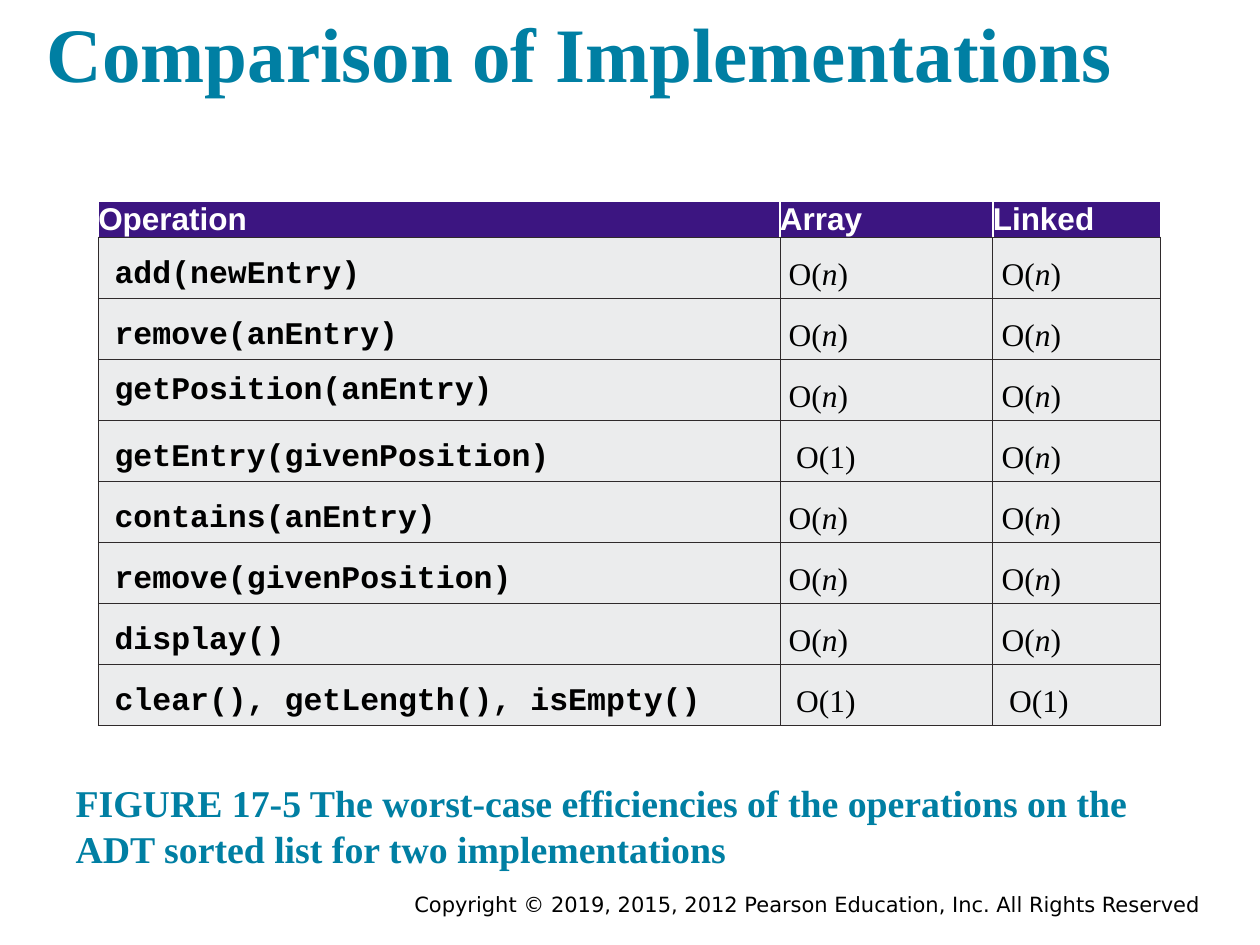
from dataclasses import dataclass

from lxml import etree
from pptx import Presentation
from pptx import util as u
from pptx.dml.color import RGBColor
from pptx.enum import text
from pptx.oxml import ns

TEAL = RGBColor(0x00, 0x7F, 0xA3)
PURPLE = RGBColor(0x3C, 0x15, 0x81)
PALE_GRAY = RGBColor(0xEB, 0xEC, 0xED)
DARK = RGBColor(0x2F, 0x2A, 0x2B)
WHITE = RGBColor(0xFF, 0xFF, 0xFF)
BLACK = RGBColor(0x00, 0x00, 0x00)

SERIF = "Times New Roman"
CODE = "Courier New"
LINEAR = "O(n)"
CONSTANT = "O(1)"

COLUMN_WIDTHS = (5.41, 1.69, 1.33)
HEADER_HEIGHT = 0.28
ROW_HEIGHT = 0.485
CELL_INDENT = 0.06


@dataclass(frozen=True)
class Operation:
    name: str
    array: str = LINEAR
    linked: str = LINEAR
    spacing: float = 1.3


HEADINGS = ("Operation", "Array", "Linked")
OPERATIONS = (
    Operation("add(newEntry)"),
    Operation("remove(anEntry)"),
    Operation("getPosition(anEntry)", spacing=1.0),
    Operation("getEntry(givenPosition)", array=CONSTANT),
    Operation("contains(anEntry)"),
    Operation("remove(givenPosition)"),
    Operation("display()"),
    Operation("clear(), getLength(), isEmpty()", CONSTANT, CONSTANT),
)


def style(para, face: str, size: float, color: RGBColor, bold: bool = False) -> None:
    font = para.font
    font.name, font.size, font.bold = face, u.Pt(size), bold
    font.color.rgb = color


def place(shape, left: float, top: float, width: float, height: float) -> None:
    shape.left, shape.top = u.Inches(left), u.Inches(top)
    shape.width, shape.height = u.Inches(width), u.Inches(height)


def set_insets(holder, left: float, top: float, right: float, bottom: float) -> None:
    """Set the margins of a text frame or a table cell."""
    holder.margin_left, holder.margin_top = u.Inches(left), u.Inches(top)
    holder.margin_right, holder.margin_bottom = u.Inches(right), u.Inches(bottom)


def set_indent(para, inches: float) -> None:
    properties = para._p.get_or_add_pPr()
    properties.set("marL", str(u.Inches(inches)))
    properties.set("indent", "0")


def fill_placeholder(shape, words: str, size: float) -> None:
    frame = shape.text_frame
    frame.text = words
    frame.word_wrap = True
    frame.auto_size = text.MSO_AUTO_SIZE.NONE
    frame.vertical_anchor = text.MSO_ANCHOR.BOTTOM
    set_insets(frame, 0.1, 0.1, 0.1, 0.1)
    para = frame.paragraphs[0]
    para.alignment = text.PP_ALIGN.LEFT
    para.space_before = u.Pt(0)
    set_indent(para, 0)
    etree.SubElement(para._p.get_or_add_pPr(), ns.qn("a:buNone"))
    style(para, SERIF, size, TEAL, bold=True)


def draw_borders(cell, sides: str, color: RGBColor, points: float) -> None:
    """Add borders in the order L, R, T, B, ahead of the cell's fill."""
    properties = cell._tc.get_or_add_tcPr()
    for position, side in enumerate(sides, start=len(properties)):
        line = etree.Element(ns.qn(f"a:ln{side}"), w=str(u.Pt(points)))
        solid = etree.SubElement(line, ns.qn("a:solidFill"))
        etree.SubElement(solid, ns.qn("a:srgbClr"), val=str(color))
        properties.insert(position, line)


def fill_heading(cell, words: str) -> None:
    cell.text = words
    set_insets(cell, 0, 0, 0, 0)
    style(cell.text_frame.paragraphs[0], "Arial", 18, WHITE, bold=True)
    draw_borders(cell, "LRT", WHITE, 1)
    draw_borders(cell, "B", DARK, 0.5)
    cell.fill.solid()
    cell.fill.fore_color.rgb = PURPLE


def prepare_body_cell(cell, spacing: float):
    """Format a cell below the header and return its paragraph."""
    set_insets(cell, 0.07, 0.03, 0.07, 0)
    cell.vertical_anchor = text.MSO_ANCHOR.MIDDLE
    draw_borders(cell, "LRTB", DARK, 0.5)
    cell.fill.solid()
    cell.fill.fore_color.rgb = PALE_GRAY
    para = cell.text_frame.paragraphs[0]
    para.line_spacing = spacing
    return para


def fill_name(cell, operation: Operation) -> None:
    para = prepare_body_cell(cell, operation.spacing)
    set_indent(para, CELL_INDENT)
    para.add_run().text = operation.name
    style(para, CODE, 18, BLACK, bold=True)


def fill_cost(cell, cost: str) -> None:
    para = prepare_body_cell(cell, 1.3)
    if cost == CONSTANT:
        set_indent(para, CELL_INDENT)
        pieces = (cost,)
    else:
        pieces = cost.partition("n")
    for piece in pieces:
        span = para.add_run()
        span.text = piece
        if piece == "n":
            span.font.italic = True
    style(para, SERIF, 18, BLACK)


def add_comparison_table(page) -> None:
    height = HEADER_HEIGHT + ROW_HEIGHT * len(OPERATIONS)
    table = page.shapes.add_table(
        len(OPERATIONS) + 1, len(HEADINGS),
        u.Inches(0.78), u.Inches(1.6),
        u.Inches(sum(COLUMN_WIDTHS)), u.Inches(height),
    ).table
    table.horz_banding = False
    for column, width in zip(table.columns, COLUMN_WIDTHS):
        column.width = u.Inches(width)
    for row in table.rows:
        row.height = u.Inches(ROW_HEIGHT)
    table.rows[0].height = u.Inches(HEADER_HEIGHT)

    for column, heading in enumerate(HEADINGS):
        fill_heading(table.cell(0, column), heading)
    for row, operation in enumerate(OPERATIONS, start=1):
        fill_name(table.cell(row, 0), operation)
        fill_cost(table.cell(row, 1), operation.array)
        fill_cost(table.cell(row, 2), operation.linked)


def add_copyright(page) -> None:
    box = page.shapes.add_textbox(0, 0, 0, 0)
    place(box, 1.75, 7.03, 7.83, 0.31)
    frame = box.text_frame
    frame.word_wrap = True
    set_insets(frame, 0.05, 0.05, 0.05, 0.05)
    para = frame.paragraphs[0]
    para.text = "Copyright © 2019, 2015, 2012 Pearson Education, Inc. All Rights Reserved"
    para.alignment = text.PP_ALIGN.RIGHT
    style(para, "DejaVu Sans", 12, BLACK)


def main() -> None:
    deck = Presentation()
    deck.slide_width, deck.slide_height = u.Inches(10), u.Inches(7.5)
    page = deck.slides.add_slide(deck.slide_layouts[1])

    title, caption = page.shapes.title, page.placeholders[1]
    place(title, 0.27, 0, 9.31, 0.88)
    fill_placeholder(title, "Comparison of Implementations", 44)
    place(caption, 0.5, 6.13, 9, 0.88)
    fill_placeholder(
        caption,
        "FIGURE 17-5 The worst-case efficiencies of the operations "
        "on the ADT sorted list for two implementations",
        21.6,
    )
    add_comparison_table(page)
    add_copyright(page)
    deck.save("out.pptx")


if __name__ == "__main__":
    main()
